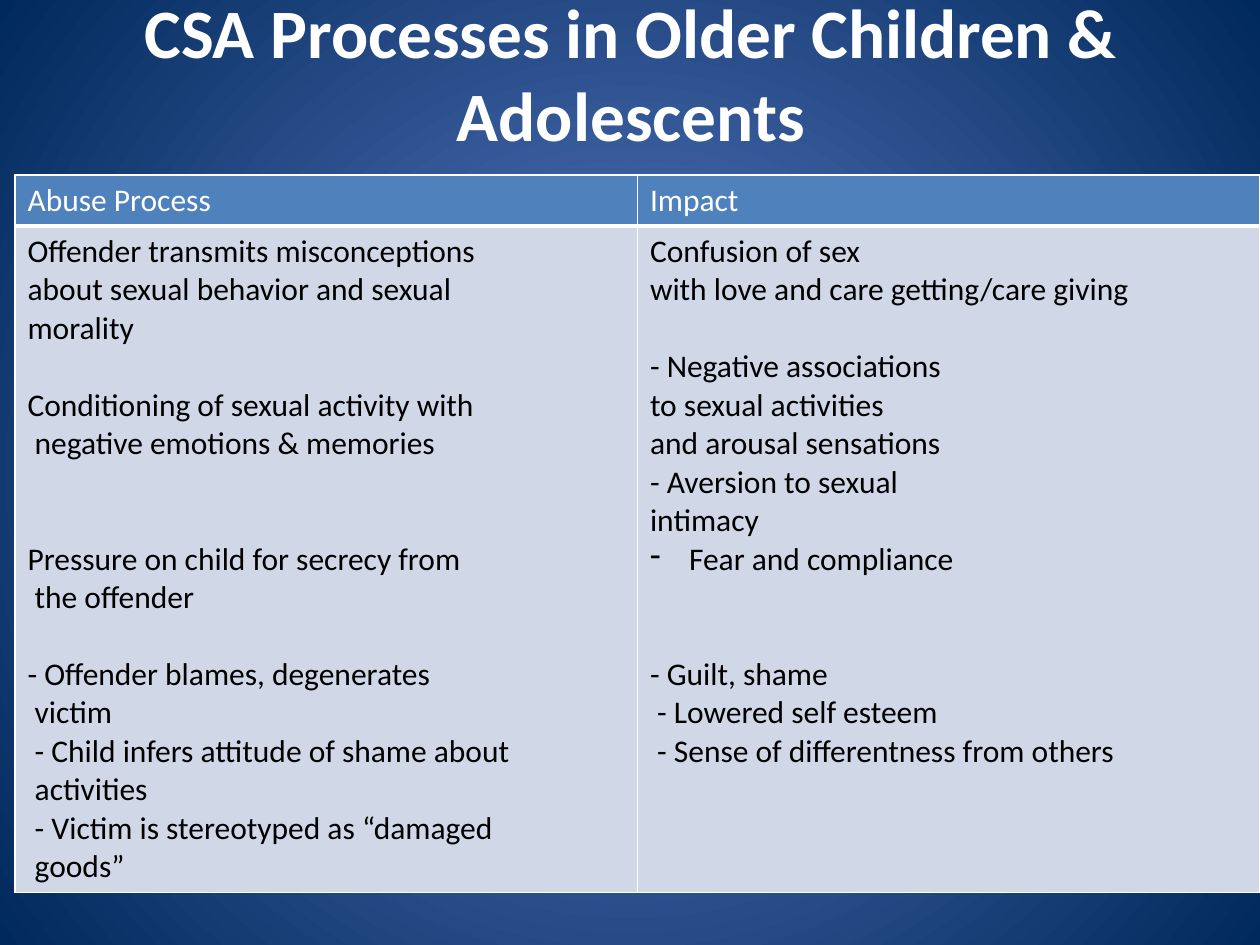
from dataclasses import dataclass

import lxml.etree
import pptx
import pptx.dml.color
import pptx.enum.text
import pptx.oxml.ns
import pptx.util

PX = 914400 / 126
qn = pptx.oxml.ns.qn
rgb = pptx.dml.color.RGBColor.from_string


@dataclass(frozen=True)
class Theme:
    font: str = "Calibri"
    title_size: float = 39.6
    body_size: float = 18
    line_height: float = 22
    white: str = "FFFFFF"
    text: str = "000000"
    header: str = "4F81BD"
    body: str = "D0D8E8"
    glow: str = "5E7CC5"
    edge: str = "00295C"


THEME = Theme()
TITLE = "CSA Processes in Older Children & Adolescents"
HEADERS = ["Abuse Process", "Impact"]
# Each line: (blank lines of space above it, text, is bulleted)
PROCESS = [
    (0, "Offender transmits misconceptions", False),
    (0, "about sexual behavior and sexual", False),
    (0, "morality", False),
    (1, "Conditioning of sexual activity with", False),
    (0, " negative emotions & memories", False),
    (2, "Pressure on child for secrecy from", False),
    (0, " the offender", False),
    (1, "- Offender blames, degenerates", False),
    (0, " victim", False),
    (0, " - Child infers attitude of shame about", False),
    (0, " activities", False),
    (0, " - Victim is stereotyped as “damaged", False),
    (0, " goods”", False),
]
IMPACT = [
    (0, "Confusion of sex", False),
    (0, "with love and care getting/care giving", False),
    (1, "- Negative associations", False),
    (0, "to sexual activities", False),
    (0, "and arousal sensations", False),
    (0, "- Aversion to sexual", False),
    (0, "intimacy", False),
    (0, "Fear and compliance", True),
    (2, "- Guilt, shame", False),
    (0, " - Lowered self esteem", False),
    (0, " - Sense of differentness from others", False),
]


def px(n):
    return pptx.util.Emu(round(n * PX))


def set_font(p, size, color, bold=False):
    p.font.name = THEME.font
    p.font.size = pptx.util.Pt(size)
    p.font.bold = bold
    p.font.color.rgb = rgb(color)


def paint_background(s):
    """Fill the slide with a gradient that spreads from its centre."""
    fill = s.background.fill
    fill.gradient()
    for stop, color in zip(fill.gradient_stops, (THEME.glow, THEME.edge)):
        stop.color.rgb = rgb(color)
    for position, stop in enumerate(fill.gradient_stops):
        stop.position = position
    grad = s.element.find(".//" + qn("a:gradFill"))
    grad.remove(grad.find(qn("a:lin")))
    path = lxml.etree.SubElement(grad, qn("a:path"), path="circle")
    lxml.etree.SubElement(path, qn("a:fillToRect"),
                          {side: "50000" for side in "ltrb"})


def place_title(s, x, y, w, h):
    sp = s.shapes.title
    sp.left, sp.top, sp.width, sp.height = map(px, (x, y, w, h))
    tf = sp.text_frame
    tf.text = TITLE
    tf.word_wrap = True
    tf.auto_size = pptx.enum.text.MSO_AUTO_SIZE.NONE
    tf.vertical_anchor = pptx.enum.text.MSO_ANCHOR.MIDDLE
    p = tf.paragraphs[0]
    p.alignment = pptx.enum.text.PP_ALIGN.CENTER
    set_font(p, THEME.title_size, THEME.white, bold=True)


def format_cell(cell, color, bottom=1):
    """Draw white borders (widths in points) and a solid fill."""
    props = cell._tc.get_or_add_tcPr()
    for side, width in (("L", 1), ("R", 1), ("T", 1), ("B", bottom)):
        ln = lxml.etree.SubElement(props, qn("a:ln" + side),
                                   w=str(pptx.util.Pt(width)))
        solid = lxml.etree.SubElement(ln, qn("a:solidFill"))
        lxml.etree.SubElement(solid, qn("a:srgbClr"), val=THEME.white)
    cell.fill.solid()
    cell.fill.fore_color.rgb = rgb(color)


def add_dash_bullet(p):
    props = p._p.get_or_add_pPr()
    props.set("marL", str(px(39)))
    props.set("indent", str(px(-39)))
    bullet = lxml.etree.Element(qn("a:buChar"), char="-")
    # Bullets precede the default run properties in the schema.
    props.insert(len(props.findall(qn("a:spcBef"))), bullet)


def write_lines(tf, lines):
    for i, (gap, text, bulleted) in enumerate(lines):
        p = tf.add_paragraph() if i else tf.paragraphs[0]
        p.text = text
        set_font(p, THEME.body_size, THEME.text)
        if gap:
            p.space_before = pptx.util.Pt(gap * THEME.line_height)
        if bulleted:
            add_dash_bullet(p)


def place_table(s, x, y, w, h, header_h=51):
    table = s.shapes.add_table(2, 2, px(x), px(y), px(w), px(h)).table
    table.horz_banding = False
    table.rows[0].height = px(header_h)
    table.rows[1].height = px(h - header_h)
    for col, (header, lines) in enumerate(zip(HEADERS, (PROCESS, IMPACT))):
        table.columns[col].width = px(w / 2)
        top, body = table.cell(0, col), table.cell(1, col)
        format_cell(top, THEME.header, bottom=3)
        format_cell(body, THEME.body)
        top.text = header
        set_font(top.text_frame.paragraphs[0], THEME.body_size, THEME.white)
        write_lines(body.text_frame, lines)


def main():
    prs = pptx.Presentation()
    prs.slide_width, prs.slide_height = px(1260), px(945)
    s = prs.slides.add_slide(prs.slide_layouts[5])
    paint_background(s)
    place_title(s, 64, 0, 1134, 145)
    place_table(s, 15, 175, 1245, 717)
    prs.save("out.pptx")


if __name__ == "__main__":
    main()
